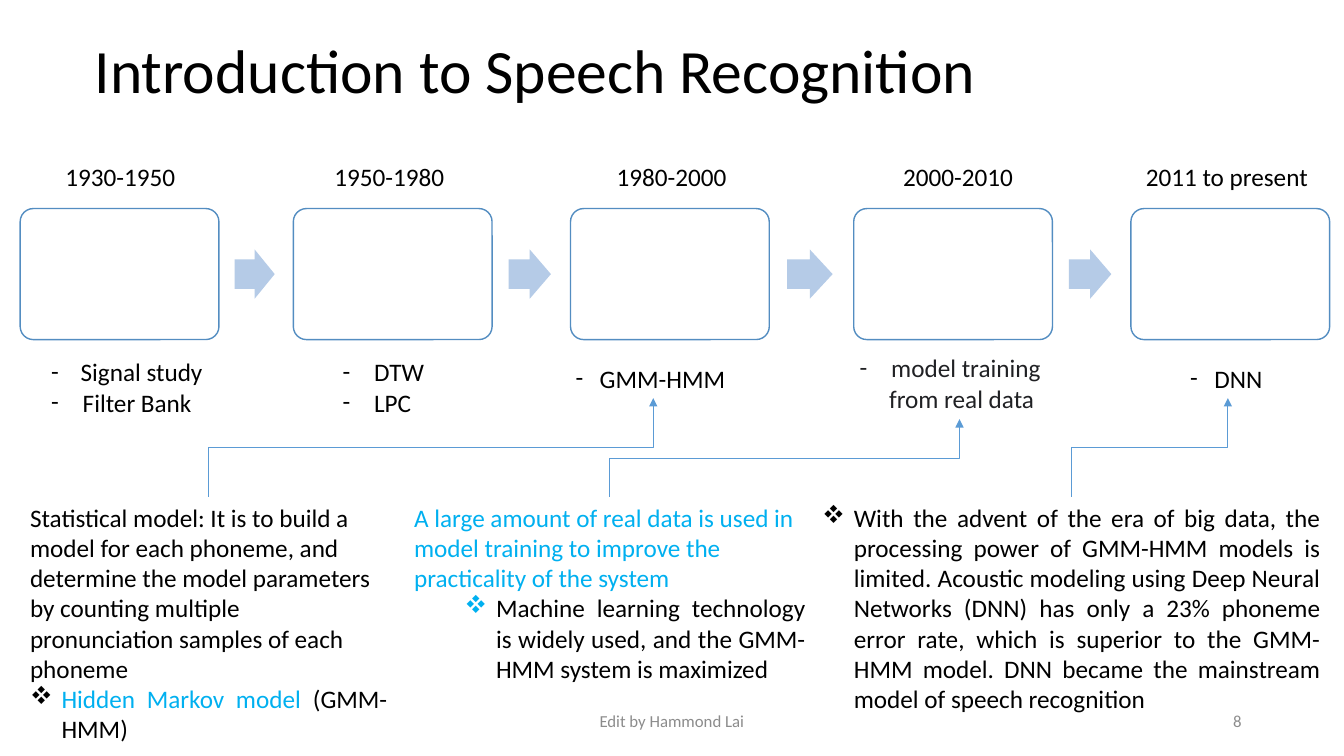
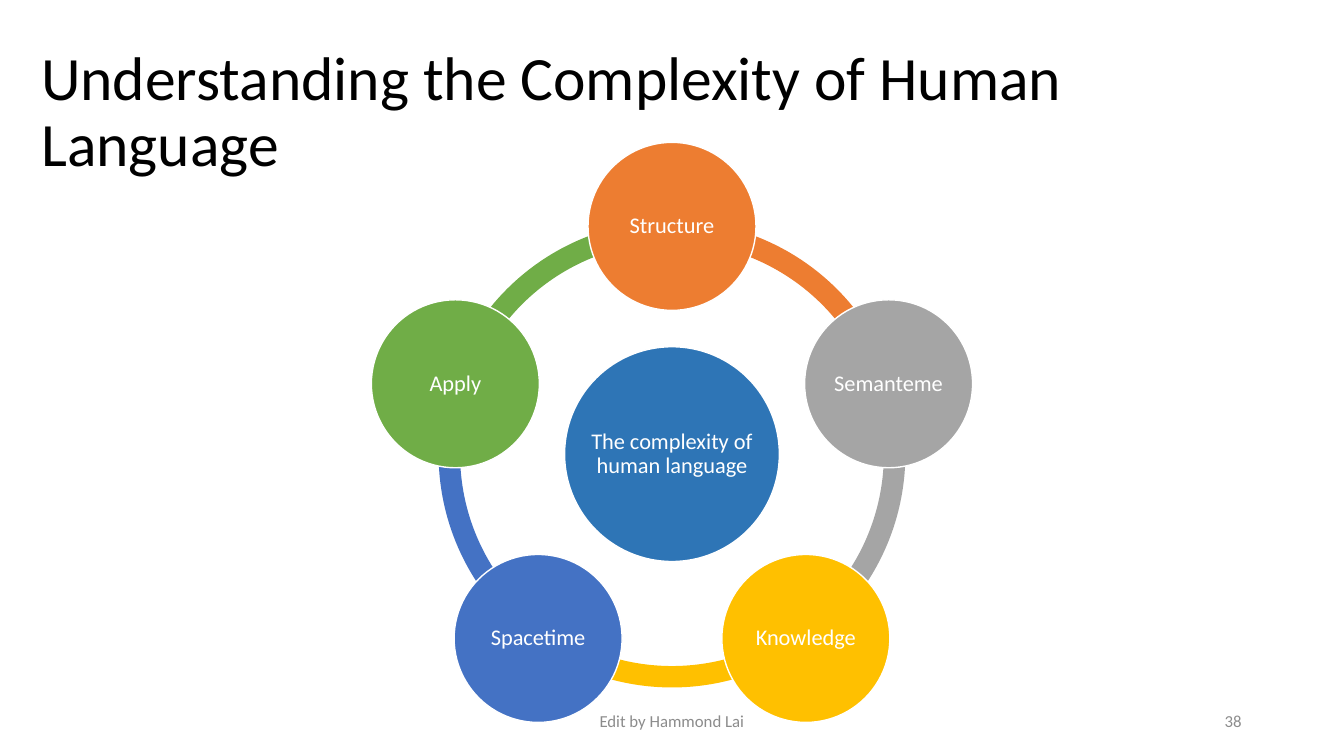
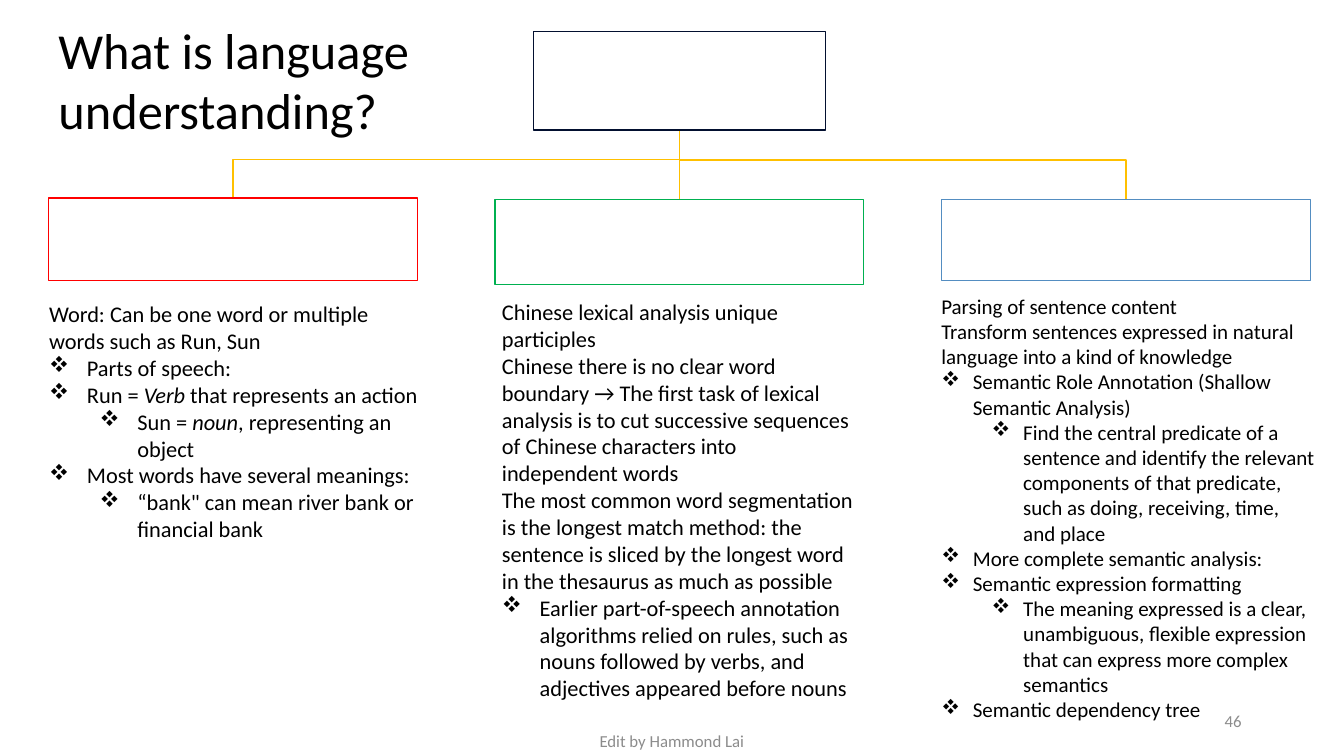
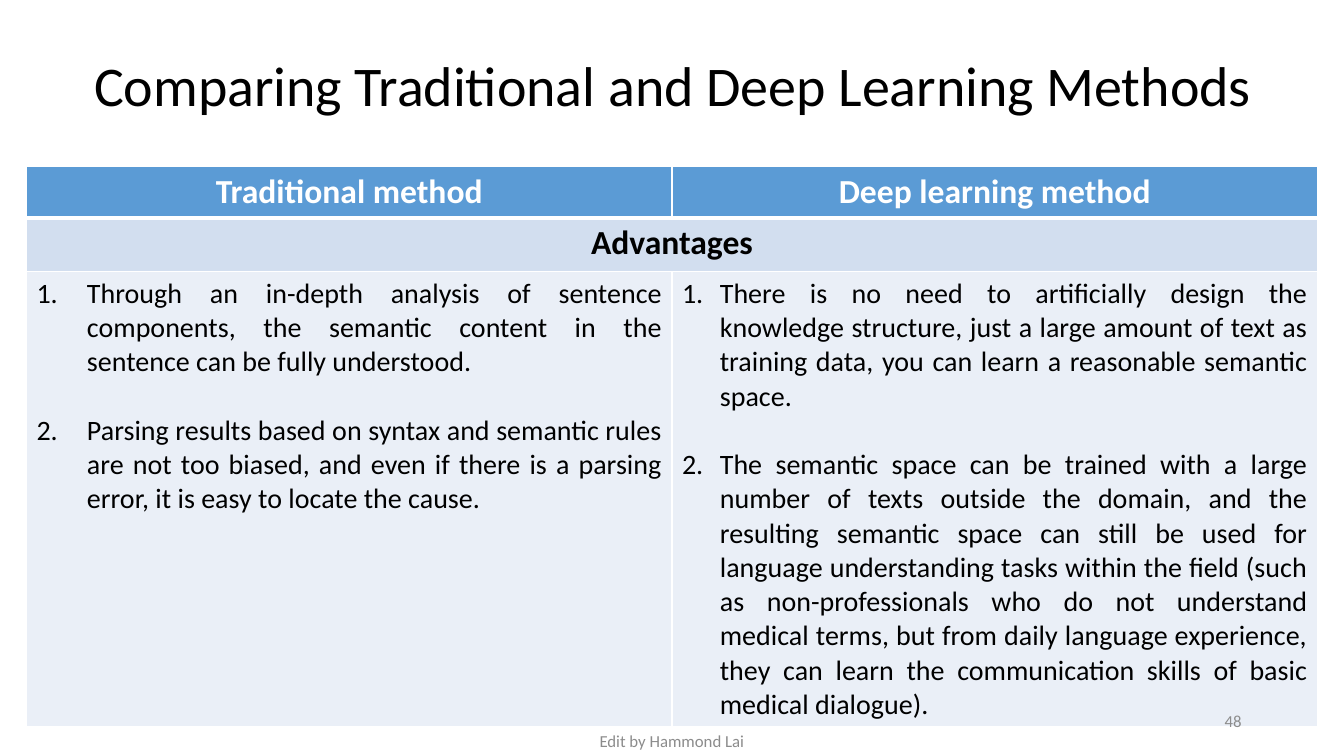
from dataclasses import dataclass
from itertools import pairwise
from math import cos, radians, sin

from lxml import etree
from pptx import Presentation, util
from pptx.dml.color import RGBColor
from pptx.enum import shapes, text
from pptx.oxml import ns

Pt = util.Pt
KIND = shapes.MSO_SHAPE
LINK = shapes.MSO_CONNECTOR
ALIGN = text.PP_ALIGN
ANCHOR = text.MSO_ANCHOR

# Shared look
FONT = "Calibri"
WIDE, HIGH = 960, 540
BLACK = RGBColor(0, 0, 0)
WHITE = RGBColor(0xFF, 0xFF, 0xFF)
GREY = RGBColor(0x8C, 0x8C, 0x8C)
INK = RGBColor(0x20, 0x21, 0x24)
CYAN = RGBColor(0x00, 0xB0, 0xF0)
SKY = RGBColor(0x5B, 0x9B, 0xD5)
STEEL = RGBColor(0x53, 0x8D, 0xC1)
PALE = RGBColor(0xB5, 0xCB, 0xE7)
NAVY = RGBColor(0x02, 0x0F, 0x2F)
RED = RGBColor(0xFF, 0x00, 0x00)
LEAF = RGBColor(0x00, 0xB0, 0x50)
GOLD = RGBColor(0xFF, 0xC0, 0x00)
ORANGE = RGBColor(0xED, 0x7D, 0x31)
SILVER = RGBColor(0xA5, 0xA5, 0xA5)
BLUE = RGBColor(0x44, 0x72, 0xC4)
GREEN = RGBColor(0x70, 0xAD, 0x47)
CORE = RGBColor(0x2E, 0x75, 0xB6)
BAND = RGBColor(0xD2, 0xDE, 0xEF)
MIST = RGBColor(0xEA, 0xEF, 0xF7)
GEM = "v"  # the four-diamond mark in Wingdings


@dataclass
class Para:
    """Runs are strings or (string, colour, italic); "\\n" breaks a line."""
    runs: tuple
    mark: str = ""
    left: float = 0
    hang: float = 0
    align: int = ALIGN.LEFT
    tint: RGBColor = None
    before: float = 0


def item(*runs, left=22.5, hang=22.5, mark=GEM, **more):
    return Para(runs, mark, left, hang, **more)


def add(parent, tag, **attrs):
    return etree.SubElement(parent, ns.qn(tag), attrs)


# Text
def style(run, size, color, bold=False, italic=False):
    font = run.font
    font.name, font.size = FONT, Pt(size)
    font.bold, font.italic = bold, italic
    font.color.rgb = color


def indent(para, part, color):
    props = para._p.get_or_add_pPr()
    props.set("marL", str(Pt(part.left)))
    props.set("indent", str(-Pt(part.hang)))
    if part.mark:
        add(add(props, "a:buClr"), "a:srgbClr", val=str(part.tint or color))
        add(props, "a:buFont", typeface="Wingdings" if part.mark == GEM else FONT)
        if part.mark == "1.":
            add(props, "a:buAutoNum", type="arabicPeriod")
        else:
            add(props, "a:buChar", char=part.mark)


def write(frame, paras, size, color=BLACK, align=None, lead=None, bold=False):
    for num, part in enumerate(paras):
        if isinstance(part, str):
            part = Para((part,))
        para = frame.add_paragraph() if num else frame.paragraphs[0]
        para.alignment = align or part.align
        if lead:
            para.line_spacing = lead
        if part.before:
            para.space_before = Pt(part.before)
        indent(para, part, color)
        for run in part.runs:
            words, tint, slant = run if isinstance(run, tuple) else (run, color, False)
            for row, line in enumerate(words.split("\n")):
                if row:
                    para.add_line_break()
                piece = para.add_run()
                piece.text = line
                style(piece, size, tint, bold, slant)


def label(slide, box, paras, size, color=BLACK, align=None, lead=None,
          anchor=ANCHOR.TOP):
    frame = slide.shapes.add_textbox(*map(Pt, box)).text_frame
    frame.word_wrap = True
    frame.vertical_anchor = anchor
    write(frame, paras, size, color, align, lead)


def title(slide, box, words, size=44, align=None):
    label(slide, box, [words], size, align=align, lead=0.9, anchor=ANCHOR.MIDDLE)


def footer(slide, num, top=500.4):
    label(slide, (318, top, 324, 28.8), ["Edit by Hammond Lai"], 12, GREY,
          ALIGN.CENTER, anchor=ANCHOR.MIDDLE)
    label(slide, (678, 500.4, 216, 28.8), [str(num)], 12, GREY, ALIGN.RIGHT,
          anchor=ANCHOR.MIDDLE)


# Shapes and lines
def shape(slide, kind, box, fill, line=None, adj=()):
    form = slide.shapes.add_shape(kind, *map(Pt, box))
    form.shadow.inherit = False
    form.fill.solid()
    form.fill.fore_color.rgb = fill
    if line is None:
        form.line.fill.background()
    else:
        form.line.color.rgb = line
        form.line.width = Pt(1)
    for num, value in enumerate(adj):
        form.adjustments[num] = value
    return form


def link(slide, kind, ends, color, width):
    line = slide.shapes.add_connector(kind, *map(Pt, ends))
    line.line.color.rgb = color
    line.line.width = Pt(width)
    add(line._element.spPr, "a:effectLst")
    return line


def riser(slide, x0, y0, x1, y1):
    """Elbow arrow that leaves upwards: a flipped elbow turned by 90 degrees."""
    midx, midy = (x0 + x1) / 2, (y0 + y1) / 2
    dx, dy = (y0 - y1) / 2, (x1 - x0) / 2
    line = link(slide, LINK.ELBOW, (midx + dx, midy + dy, midx - dx, midy - dy),
                SKY, 0.5)
    props = line._element.spPr
    props.find(ns.qn("a:xfrm")).set("rot", "5400000")
    add(props.find(ns.qn("a:ln")), "a:tailEnd", type="triangle")


# Timeline
def dash(words, hang=22.5):
    return item(words, left=hang, hang=hang, mark="-")


# box left, years, years left, notes left and top, notes colour, notes
STAGES = [
    (14.4, "1930-1950", 39.6, 29.5, 251.3, BLACK,
     [dash("Signal study", 21), dash("Filter Bank")]),
    (209.5, "1950-1980", 231.8, 237.6, 251.3, BLACK, [dash("DTW"), dash("LPC")]),
    (407.5, "1980-2000", 433.4, 404, 255.6, BLACK, [dash("GMM-HMM", 17.3)]),
    (609.8, "2000-2010", 638, 607, 248.4, INK,
     [dash("model training"), Para(("from real data",), left=21)]),
    (807.8, "2011 to present", 811.4, 843, 255.6, BLACK, [dash("DNN", 17.3)]),
]

NOTES = [
    ((580.3, 355, 370, 160), [item(
        "With the advent of the era of big data, the processing power of GMM-HMM "
        "models is limited. Acoustic modeling using Deep Neural Networks (DNN) has "
        "only a 23% phoneme error rate, which is superior to the GMM-HMM model. DNN "
        "became the mainstream model of speech recognition", align=ALIGN.JUSTIFY)]),
    ((288.7, 355, 293.8, 160), [
        Para((("A large amount of real data is used in model training to improve "
               "the practicality of the system", CYAN, False),)),
        item("Machine learning technology is widely used, and the GMM-HMM system "
             "is maximized", left=58.5, align=ALIGN.JUSTIFY, tint=CYAN)]),
    ((14.4, 355, 269.3, 181), [
        "Statistical model: It is to build a model for each phoneme, and determine "
        "the model parameters by counting multiple pronunciation samples of each "
        "phoneme",
        item(("Hidden Markov model ", CYAN, False), "(GMM-HMM)",
             align=ALIGN.JUSTIFY)]),
]


def timeline(slide, top, width=142, height=93.6):
    for left, years, yearx, notex, notey, color, notes in STAGES:
        shape(slide, KIND.ROUNDED_RECTANGLE, (left, top, width, height), WHITE,
              STEEL, [0.1])
        label(slide, (yearx, top - 37.4, 140, 28.8), [years], 18)
        label(slide, (notex, notey, 156, 51), notes, 18, color)
    for one, two in pairwise(stage[0] for stage in STAGES):
        gap = two - one - width
        wide = gap * 0.54
        shape(slide, KIND.RIGHT_ARROW,
              (one + width + gap * 0.21, top + height / 2 - 17.6, wide, 35.2),
              PALE, adj=[0.6, 0.5])


def history(slide):
    title(slide, (60.5, 0, 828, 104.4), "Introduction to Speech Recognition")
    timeline(slide, 149)
    for box, paras in NOTES:
        label(slide, box, paras, 18)
    for ends in ((149, 355, 466.6, 284.4), (435.6, 355, 685.4, 299.5),
                 (765.4, 355, 877, 284.4)):
        riser(slide, *ends)
    footer(slide, 8)


# Wheel
NODES = [("Structure", ORANGE), ("Semanteme", SILVER), ("Knowledge", GOLD),
         ("Spacetime", BLUE), ("Apply", GREEN)]


def disc(slide, x, y, size, words, fill):
    form = shape(slide, KIND.OVAL, (x - size / 2, y - size / 2, size, size), fill,
                 WHITE)
    frame = form.text_frame
    frame.word_wrap = False
    frame.vertical_anchor = ANCHOR.MIDDLE
    write(frame, [words], 16, WHITE, ALIGN.CENTER, 0.9)


def wheel(slide, x, y, ring, reach):
    step = 360 / len(NODES)
    turns = [270 + step * num for num in range(len(NODES))]
    for turn, (_, fill) in zip(turns, NODES):
        # Angles are stored in units of 0.6 per degree
        adj = [turn % 360 * 0.6, (turn + step) % 360 * 0.6, 0.046]
        shape(slide, KIND.BLOCK_ARC, (x - ring / 2, y - ring / 2, ring, ring), fill,
              adj=adj)
    disc(slide, x, y, 153.4, "The complexity of\nhuman language", CORE)
    for turn, (words, fill) in zip(turns, NODES):
        angle = radians(turn)
        disc(slide, x + reach * cos(angle), y + reach * sin(angle), 120, words, fill)


def language(slide):
    title(slide, (22.3, 28.8, 915, 104.4),
          "Understanding the Complexity of Human Language")
    wheel(slide, WIDE / 2, 324.4, 333.4, 162.7)
    footer(slide, 38)


# Tree
def point(*runs, deep=False, hang=27):
    return item(*runs, left=hang + 36 * deep, hang=hang)


def small(words, deep=False):
    return point(words, deep=deep, hang=22.5)


# branch box, line colour, text box, size, paragraphs
BRANCHES = [
    ((34.6, 141.4, 263.5, 59), RED, (28, 211, 278, 201), 16, [
        "Word: Can be one word or multiple words such as Run, Sun",
        point("Parts of speech:"),
        point("Run = ", ("Verb", BLACK, True), " that represents an action"),
        point("Sun = ", ("noun", BLACK, True), ", representing an object", deep=True),
        point("Most words have several meanings:"),
        point("“bank\" can mean river bank or financial bank", deep=True)]),
    ((353.5, 142.6, 263.5, 60.5), LEAF, (351.4, 209.5, 267, 317.5), 16, [
        "Chinese lexical analysis unique participles",
        "Chinese there is no clear word boundary → The first task of lexical analysis "
        "is to cut successive sequences of Chinese characters into independent words",
        "The most common word segmentation is the longest match method: the sentence "
        "is sliced by the longest word in the thesaurus as much as possible",
        point("Earlier part-of-speech annotation algorithms relied on rules, such as "
              "nouns followed by verbs, and adjectives appeared before nouns")]),
    ((672.5, 142.6, 263.5, 57.6), STEEL, (665.3, 206, 281.5, 334), 15, [
        "Parsing of sentence content",
        "Transform sentences expressed in natural language into a kind of knowledge",
        small("Semantic Role Annotation (Shallow Semantic Analysis)"),
        small("Find the central predicate of a sentence and identify the relevant "
              "components of that predicate, such as doing, receiving, time, and place",
              True),
        small("More complete semantic analysis:"),
        small("Semantic expression formatting"),
        small("The meaning expressed is a clear, unambiguous, flexible expression "
              "that can express more complex semantics", True),
        small("Semantic dependency tree")]),
]


def branch(slide, x, y, box):
    """Line from the root's foot at x, y to the top middle of a box."""
    endx, endy = box[0] + box[2] / 2, box[1]
    if abs(endx - x) < 1:
        link(slide, LINK.STRAIGHT, (x, y, x, endy), GOLD, 1)
        return
    bend = y + (endy - y) * 0.43
    turns = [(x, bend), (endx, bend), (endx, endy)]
    pen = slide.shapes.build_freeform(Pt(x), Pt(y))
    pen.add_line_segments([(Pt(a), Pt(b)) for a, b in turns], close=False)
    line = pen.convert_to_shape()
    line.shadow.inherit = False
    line.fill.background()
    line.line.color.rgb = GOLD
    line.line.width = Pt(1)


def tree(slide, root):
    left, top, width, height = root
    for box, *_ in BRANCHES:
        branch(slide, left + width / 2, top + height, box)
    shape(slide, KIND.RECTANGLE, root, WHITE, NAVY)
    for box, color, area, size, paras in BRANCHES:
        shape(slide, KIND.RECTANGLE, box, WHITE, color)
        label(slide, area, paras, size)


def meaning(slide):
    tree(slide, (380.9, 22.3, 208.8, 70.6))
    label(slide, (34.6, 10, 325.4, 94.3), ["What is language understanding?"], 36)
    footer(slide, 46, 514.8)


# Table
def listed(hang, *lines):
    return [item(words, left=hang, hang=hang, mark="1.", align=ALIGN.JUSTIFY,
                 before=24.4 if num else 0) for num, words in enumerate(lines)]


POINTS = [
    listed(36, "Through an in-depth analysis of sentence components, the semantic "
           "content in the sentence can be fully understood.",
           "Parsing results based on syntax and semantic rules are not too biased, "
           "and even if there is a parsing error, it is easy to locate the cause."),
    listed(27, "There is no need to artificially design the knowledge structure, "
           "just a large amount of text as training data, you can learn a reasonable "
           "semantic space.",
           "The semantic space can be trained with a large number of texts outside "
           "the domain, and the resulting semantic space can still be used for "
           "language understanding tasks within the field (such as non-professionals "
           "who do not understand medical terms, but from daily language experience, "
           "they can learn the communication skills of basic medical dialogue)."),
]


def paint(cell, fill, foot):
    props = cell._tc.get_or_add_tcPr()
    for side in "LRTB":
        width = foot if side == "B" else 1
        edge = add(props, f"a:ln{side}", w=str(Pt(width)))
        add(add(edge, "a:solidFill"), "a:srgbClr", val=str(WHITE))
    cell.fill.solid()
    cell.fill.fore_color.rgb = fill


def grid(slide, left, top, width):
    highs = (36.7, 38.2, 325)
    box = (left, top, width, sum(highs))
    table = slide.shapes.add_table(3, 2, *map(Pt, box)).table
    for row, height in zip(table.rows, highs):
        row.height = Pt(height)
    rows = [
        ([["Traditional method"], ["Deep learning method"]], SKY, 3, 24, WHITE, True),
        ([["Advantages"], []], BAND, 1, 24, BLACK, True),
        (POINTS, MIST, 1, 20, BLACK, False),
    ]
    for num, (cells, fill, foot, size, color, bold) in enumerate(rows):
        for col, paras in enumerate(cells):
            cell = table.cell(num, col)
            paint(cell, fill, foot)
            write(cell.text_frame, paras, size, color,
                  ALIGN.CENTER if bold else None, bold=bold)
    table.cell(1, 0).merge(table.cell(1, 1))


def compare(slide):
    title(slide, (21.6, 28.8, 918, 68.4),
          "Comparing Traditional and Deep Learning Methods", 40, ALIGN.CENTER)
    grid(slide, 18.9, 119, 922.2)
    footer(slide, 48, 514.8)


def main():
    deck = Presentation()
    deck.slide_width, deck.slide_height = Pt(WIDE), Pt(HIGH)
    for build in (history, language, meaning, compare):
        build(deck.slides.add_slide(deck.slide_layouts[6]))
    deck.save("out.pptx")


if __name__ == "__main__":
    main()
